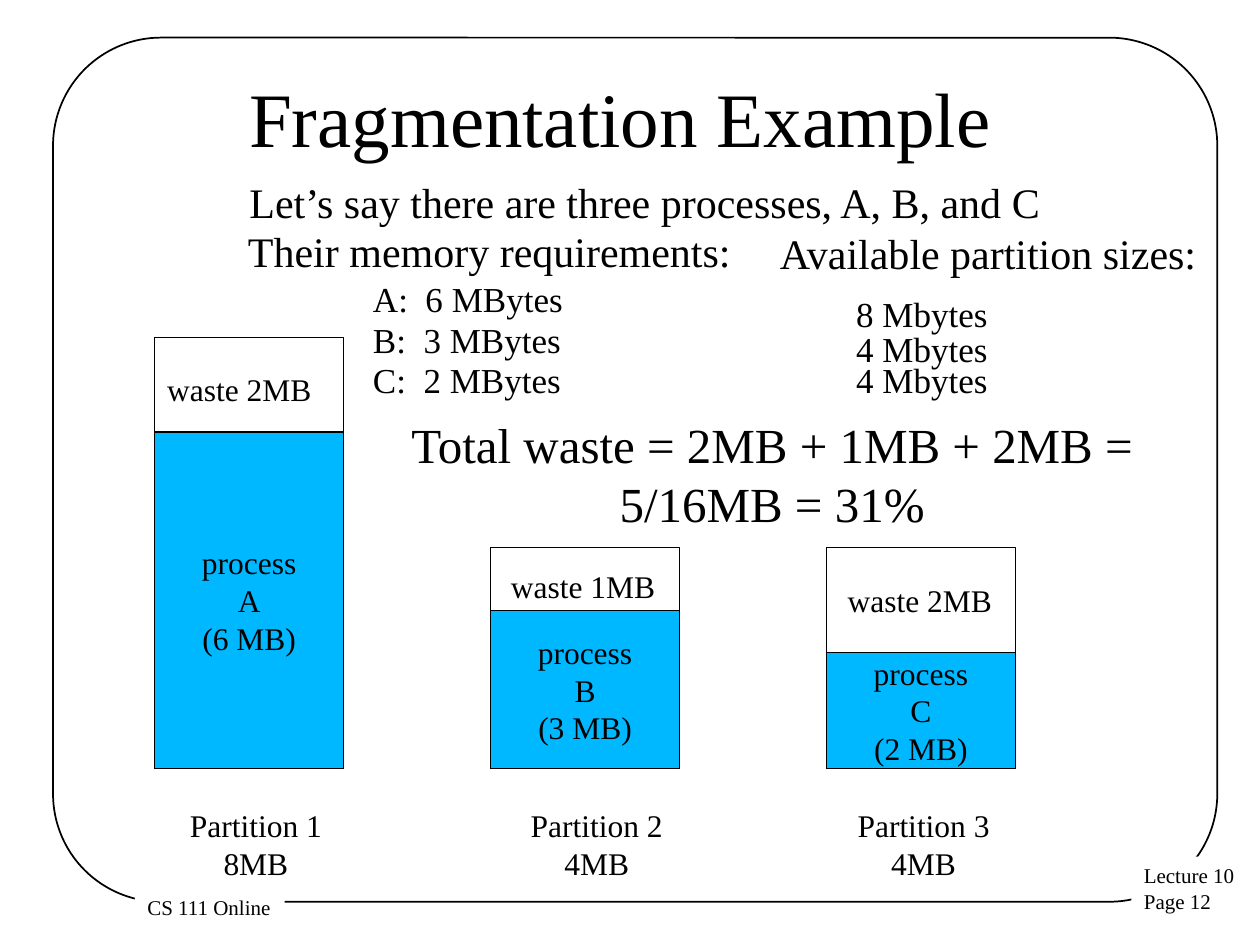
from pptx import Presentation
from pptx.dml.color import RGBColor
from pptx.enum.shapes import MSO_SHAPE
from pptx.enum.text import MSO_ANCHOR, PP_ALIGN
from pptx.util import Cm, Pt

FONT = "Times New Roman"
BLACK, WHITE, BLUE = "000000", "FFFFFF", "00B8FF"


def color(value):
    return RGBColor.from_string(value)


def write(tf, text, size=18, align=PP_ALIGN.LEFT, anchor=MSO_ANCHOR.TOP, wrap=False):
    """Fill a text frame, one paragraph for each line of text."""
    tf.word_wrap = wrap
    tf.vertical_anchor = anchor
    for i, line in enumerate(text.split("\n")):
        p = tf.paragraphs[0] if i == 0 else tf.add_paragraph()
        p.alignment = align
        r = p.add_run()
        r.text = line
        r.font.name = FONT
        r.font.size = Pt(size)
        r.font.color.rgb = color(BLACK)


def add_text(s, x, y, w, h, text, **fmt):
    tb = s.shapes.add_textbox(Cm(x), Cm(y), Cm(w), Cm(h))
    write(tb.text_frame, text, **fmt)


def add_box(s, x, y, w, h, fill=None, line=None, kind=MSO_SHAPE.RECTANGLE):
    sp = s.shapes.add_shape(kind, Cm(x), Cm(y), Cm(w), Cm(h))
    sp.shadow.inherit = False
    if fill:
        sp.fill.solid()
        sp.fill.fore_color.rgb = color(fill)
    else:
        sp.fill.background()
    if line:
        sp.line.color.rgb = color(BLACK)
        sp.line.width = Pt(line)
    else:
        sp.line.fill.background()
    return sp


def add_frame(s, x, y, w, h):
    """Rounded border, with the footers covering parts of its lower edge."""
    border = add_box(s, x, y, w, h, line=1, kind=MSO_SHAPE.ROUNDED_RECTANGLE)
    border.adjustments[0] = 0.125
    page = add_box(s, x + 21.74, y + 16.51, 2.36, 1.3, fill=WHITE)
    write(page.text_frame, "Lecture 10\nPage 12", size=12)
    course = add_box(s, x + 1.65, y + 17.15, 3.02, 0.76, fill=WHITE)
    write(course.text_frame, "CS 111 Online", size=12)


def add_title(s, x, y, w, h, text):
    title = s.shapes.title
    title.left, title.top, title.width, title.height = Cm(x), Cm(y), Cm(w), Cm(h)
    write(title.text_frame, text, size=44, align=PP_ALIGN.CENTER,
          anchor=MSO_ANCHOR.MIDDLE, wrap=True)


def add_sizes(s, x, y, w, heading, indent, item_w, items):
    """Heading with indented lines below it; each item has its own offset."""
    add_text(s, x, y, w, 1.27, heading, size=24)
    for dy, text in items:
        add_text(s, x + indent, y + dy, item_w, 1.12, text, size=20)


def add_partition(s, x, bottom, w, h, number, size, process, used, used_h,
                  waste, waste_dx, waste_dy, label_dx):
    """Memory partition: outline, process at the bottom, waste above, label below."""
    top = bottom - h
    add_box(s, x, top, w, h, line=0.75)
    block = add_box(s, x, bottom - used_h, w, used_h, fill=BLUE, line=0.75)
    write(block.text_frame, f"process\n{process}\n({used} MB)",
          align=PP_ALIGN.CENTER, anchor=MSO_ANCHOR.MIDDLE)
    add_text(s, x + waste_dx, top + waste_dy, w, 1.02, f"waste {waste}MB", wrap=True)
    add_text(s, x + label_dx, bottom + 0.64, 3.2, 1.8,
             f"Partition {number}\n{size}MB", align=PP_ALIGN.CENTER)


def main():
    prs = Presentation()
    prs.slide_width, prs.slide_height = Cm(25.4), Cm(19.05)
    s = prs.slides.add_slide(prs.slide_layouts[5])

    add_frame(s, 1.07, 0.76, 23.47, 17.42)
    add_title(s, 1.27, 0.76, 22.86, 3.18, "Fragmentation Example ")

    # Requirements and available sizes
    add_text(s, 4.78, 3.43, 16.61, 1.27,
             "Let’s say there are three processes, A, B, and C", size=24)
    add_sizes(s, 4.75, 4.42, 10.34, "Their memory requirements:", 2.52, 4.35,
              [(1.05, "A:  6 MBytes"), (1.87, "B:  3 MBytes"), (2.69, "C:  2 MBytes")])
    add_sizes(s, 15.47, 4.47, 9.04, "Available partition sizes:", 1.54, 3.18,
              [(1.3, "8 Mbytes"), (2.01, "4 Mbytes"), (2.64, "4 Mbytes")])

    # Partitions: size, process, used, used height, waste, text offsets
    partitions = [
        (8.69, 8, "A", 6, 6.78, 2, 0, 0.54, 0.44),
        (4.45, 4, "B", 3, 3.18, 1, 0.16, 0.26, 0.54),
        (4.45, 4, "C", 2, 2.34, 2, 0.18, 0.54, 0.36),
    ]
    for i, (h, *details) in enumerate(partitions):
        add_partition(s, 3.12 + 6.77 * i, 15.49, 3.81, h, i + 1, *details)

    # Result
    add_text(s, 6.99, 8.23, 17.15, 2.64, "Total waste = 2MB + 1MB + 2MB = 5/16MB = 31%",
             size=28, align=PP_ALIGN.CENTER, wrap=True)

    prs.save("out.pptx")


if __name__ == "__main__":
    main()
